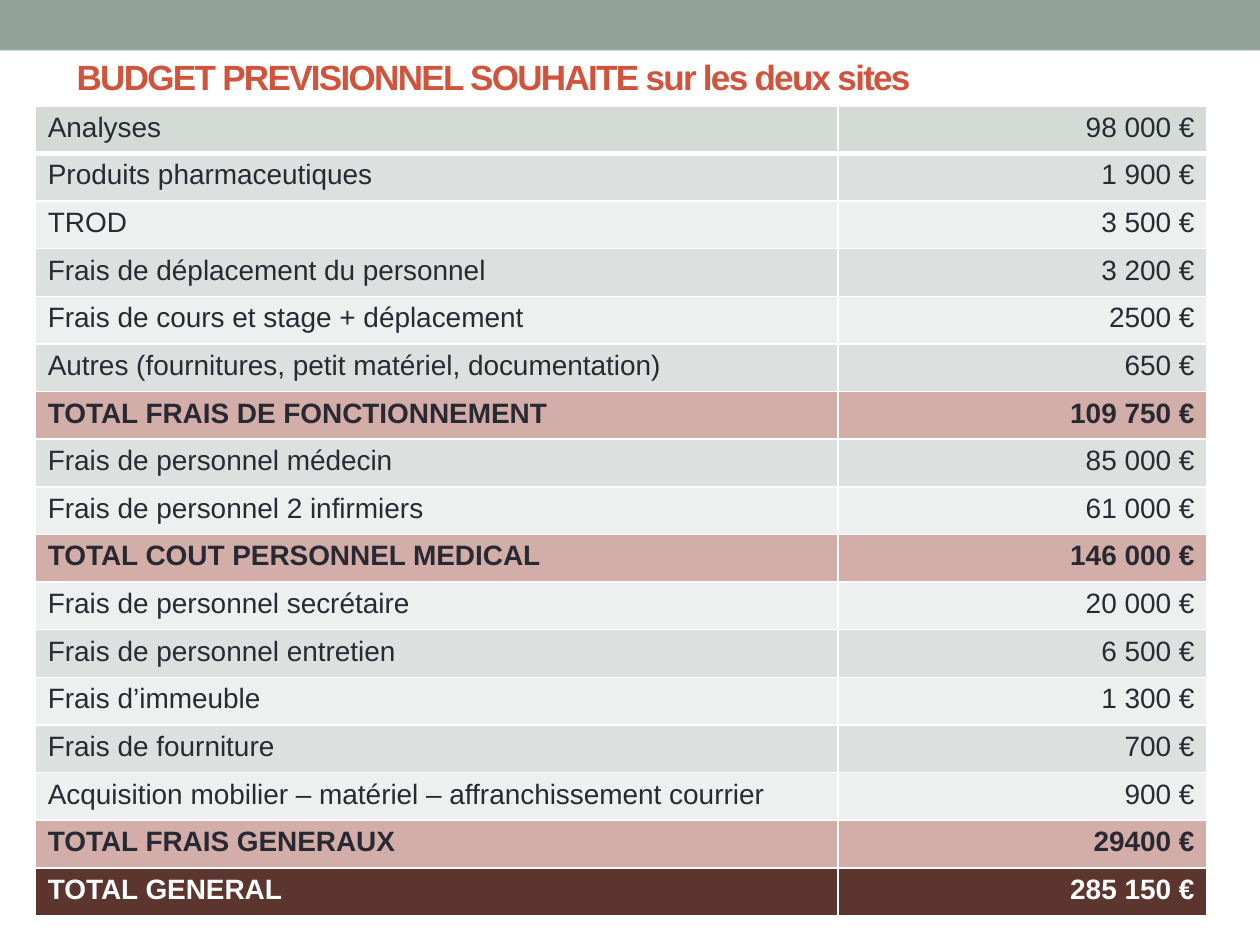
from dataclasses import dataclass

from lxml import etree
from pptx import Presentation
from pptx.dml.color import RGBColor
from pptx.enum.shapes import MSO_SHAPE
from pptx.enum.text import MSO_ANCHOR, PP_ALIGN
from pptx.oxml.ns import qn
from pptx.util import Inches, Pt

RECTANGLE = MSO_SHAPE.RECTANGLE
MIDDLE = MSO_ANCHOR.MIDDLE
LEFT, RIGHT = PP_ALIGN.LEFT, PP_ALIGN.RIGHT
FONT = "Arial"
COLORS = {
    "banner": "93A299",
    "title": "D2533C",
    "ink": "292934",
    "white": "FFFFFF",
    "first": "D4DAD6",
    "odd": "DCE0DE",
    "even": "EEF0EF",
    "subtotal": "D3AEA8",
    "total": "5B352E",
}


@dataclass(frozen=True)
class BudgetLine:
    label: str
    amount: str
    kind: str = "item"


BUDGET = [
    BudgetLine("Analyses", "98 000 €", "first"),
    BudgetLine("Produits pharmaceutiques", "1 900 €"),
    BudgetLine("TROD", "3 500 €"),
    BudgetLine("Frais de déplacement du personnel", "3 200 €"),
    BudgetLine("Frais de cours et stage + déplacement", "2500 €"),
    BudgetLine("Autres (fournitures, petit matériel, documentation)", "650 €"),
    BudgetLine("TOTAL FRAIS DE FONCTIONNEMENT", "109 750 €", "subtotal"),
    BudgetLine("Frais de personnel médecin", "85 000 €"),
    BudgetLine("Frais de personnel 2 infirmiers", "61 000 €"),
    BudgetLine("TOTAL COUT PERSONNEL MEDICAL", "146 000 €", "subtotal"),
    BudgetLine("Frais de personnel secrétaire", "20 000 €"),
    BudgetLine("Frais de personnel entretien", "6 500 €"),
    BudgetLine("Frais d’immeuble", "1 300 €"),
    BudgetLine("Frais de fourniture", "700 €"),
    BudgetLine("Acquisition mobilier – matériel – affranchissement courrier", "900 €"),
    BudgetLine("TOTAL FRAIS GENERAUX", "29400 €", "subtotal"),
    BudgetLine("TOTAL GENERAL", "285 150 €", "total"),
]
COLUMN_WIDTHS = (6.37, 2.93)
TABLE_HEIGHT = 6.43


def color(name: str) -> RGBColor:
    return RGBColor.from_string(COLORS[name])


def write_text(frame, text: str, *, size: float, ink: str, bold: bool = False,
               align=LEFT, spacing: float = 0) -> None:
    para = frame.paragraphs[0]
    para.alignment = align
    span = para.add_run()
    span.text = text
    span.font.name = FONT
    span.font.size = Pt(size)
    span.font.bold = bold
    span.font.color.rgb = color(ink)
    if spacing:
        span.font._element.set("spc", str(round(spacing * 100)))


def add_borders(cell, top: float, bottom: float) -> None:
    properties = cell._tc.get_or_add_tcPr()
    for side, width in (("L", 1), ("R", 1), ("T", top), ("B", bottom)):
        line = etree.SubElement(properties, qn(f"a:ln{side}"), w=str(Pt(width)))
        fill = etree.SubElement(line, qn("a:solidFill"))
        etree.SubElement(fill, qn("a:srgbClr"), val=COLORS["white"])


def add_banner(page) -> None:
    banner = page.shapes.add_shape(RECTANGLE, 0, 0, Inches(10), Inches(0.4))
    banner.shadow.inherit = False
    banner.fill.solid()
    banner.fill.fore_color.rgb = color("banner")
    banner.line.fill.background()


def add_title(page) -> None:
    box = page.shapes.add_textbox(Inches(0.51), Inches(0.21), Inches(9), Inches(0.8))
    frame = box.text_frame
    frame.word_wrap = True
    frame.vertical_anchor = MIDDLE
    write_text(frame, "BUDGET PREVISIONNEL SOUHAITE sur les deux sites",
               size=20, ink="title", bold=True, spacing=-1)


def add_budget_table(page) -> None:
    table = page.shapes.add_table(
        len(BUDGET), len(COLUMN_WIDTHS), Inches(0.28), Inches(0.84),
        Inches(sum(COLUMN_WIDTHS)), Inches(TABLE_HEIGHT)).table
    table.first_row = False
    table.horz_banding = False
    for column, width in zip(table.columns, COLUMN_WIDTHS):
        column.width = Inches(width)
    for index, entry in enumerate(BUDGET):
        table.rows[index].height = Inches(TABLE_HEIGHT / len(BUDGET))
        band = "odd" if index % 2 else "even"
        background = band if entry.kind == "item" else entry.kind
        for position, (text, align) in enumerate(((entry.label, LEFT), (entry.amount, RIGHT))):
            cell = table.cell(index, position)
            add_borders(cell, top=3 if index == 1 else 1, bottom=3 if index == 0 else 1)
            cell.fill.solid()
            cell.fill.fore_color.rgb = color(background)
            write_text(cell.text_frame, text, size=16, align=align,
                       ink="white" if entry.kind == "total" else "ink",
                       bold=entry.kind in ("subtotal", "total"))


def main() -> None:
    deck = Presentation()
    deck.slide_width, deck.slide_height = Inches(10), Inches(7.5)
    page = deck.slides.add_slide(deck.slide_layouts[6])
    add_banner(page)
    add_title(page)
    add_budget_table(page)
    deck.save("out.pptx")


if __name__ == "__main__":
    main()
